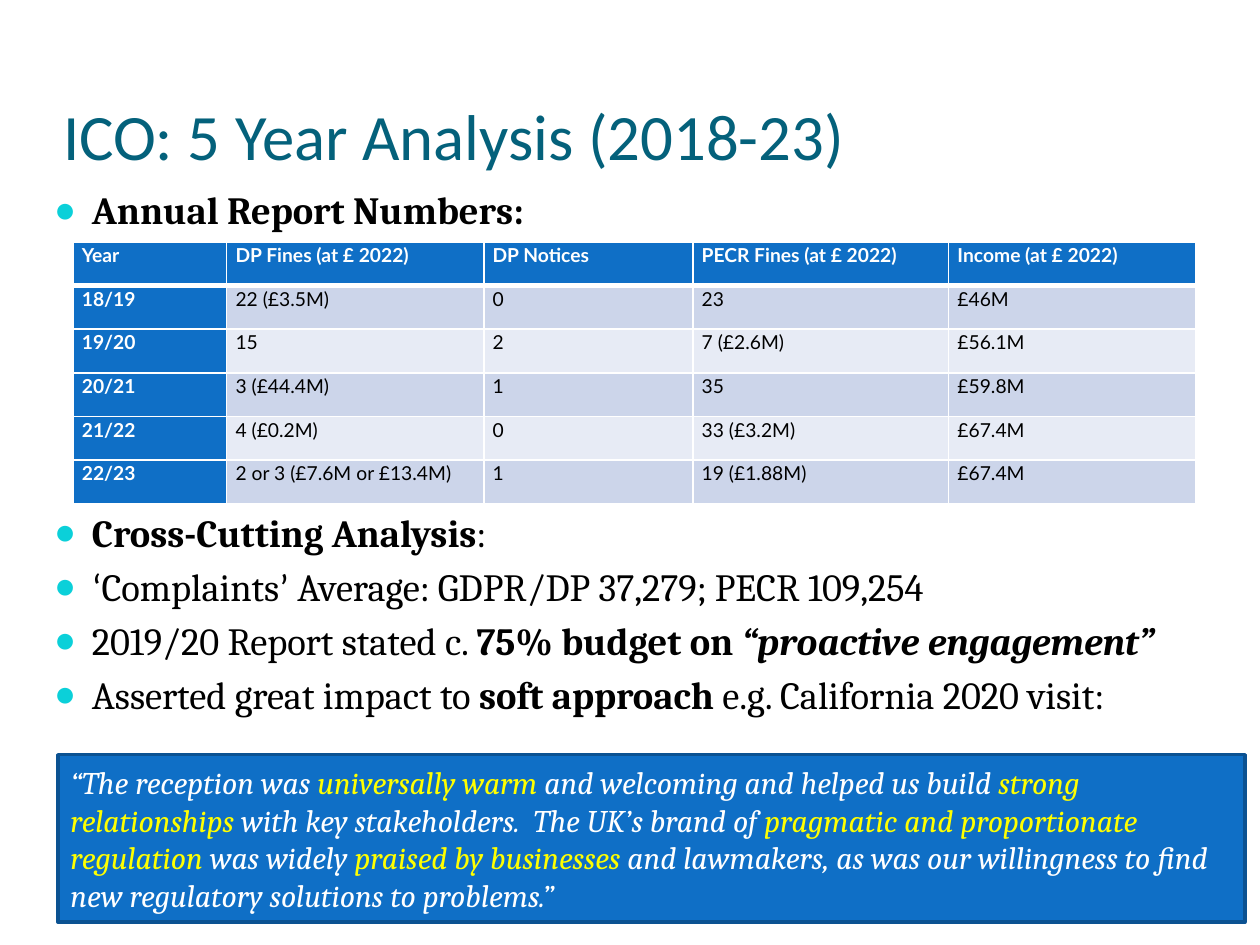
from dataclasses import dataclass
from lxml.etree import SubElement
from pptx import Presentation
from pptx.dml.color import RGBColor
from pptx.enum.shapes import MSO_SHAPE
from pptx.enum.text import MSO_ANCHOR, MSO_AUTO_SIZE, PP_ALIGN
from pptx.oxml import parse_xml
from pptx.oxml.ns import nsdecls, qn
from pptx.util import Inches, Pt


@dataclass(frozen=True)
class Theme:
    blue: str = "0F6FC6"
    outline: str = "0B5292"
    title: str = "04617B"
    bullet: str = "0BD0D9"
    white: str = "FFFFFF"
    black: str = "000000"
    yellow: str = "FFFF00"
    bands: tuple = ("CCD5EA", "E7EBF5")
    title_font: str = "Calibri"
    body_font: str = "Cambria"
    table_font: str = "Lato"
    title_size: float = 37
    body_size: float = 22
    quote_size: float = 18
    table_size: float = 11


THEME = Theme()
TITLE = "ICO: 5 Year Analysis (2018-23)"
BOLD = {"bold": True}
BOLD_ITALIC = {"bold": True, "italic": True}
MARK = {"font": THEME.title_font}

BULLETS = [
    [("Annual Report Numbers:", BOLD)],
    [("Cross-Cutting Analysis", BOLD), (":", {})],
    [("‘", MARK), ("Complaints", {}), ("’", MARK),
     (" Average: GDPR/DP 37,279; PECR 109,254", {})],
    [("2019/20 Report stated c. ", {}), ("75% budget on ", BOLD),
     ("“proactive engagement”", BOLD_ITALIC)],
    [("Asserted great impact to ", {}), ("soft approach ", BOLD),
     ("e.g. California 2020 visit:", {})],
]
BULLET_GAPS = [0, 158, 4.4, 4.4, 4.4]

TABLE = [
    ["Year", "DP Fines (at £ 2022)", "DP Notices", "PECR Fines (at £ 2022)", "Income (at £ 2022)"],
    ["18/19", "22 (£3.5M)", "0", "23", "£46M"],
    ["19/20", "15", "2", "7 (£2.6M)", "£56.1M"],
    ["20/21", "3 (£44.4M)", "1", "35", "£59.8M"],
    ["21/22", "4 (£0.2M)", "0", "33 (£3.2M)", "£67.4M"],
    ["22/23", "2 or 3 (£7.6M or £13.4M)", "1", "19 (£1.88M)", "£67.4M"],
]
COLUMN_WIDTHS = [1.22, 2.04, 1.66, 2.03, 1.96]
TABLE_HEIGHT = 2.08

QUOTE = [
    ("“The reception was ", THEME.white),
    ("universally warm", THEME.yellow),
    (" and welcoming and helped us build ", THEME.white),
    ("strong relationships ", THEME.yellow),
    ("with key stakeholders.  The UK’s brand of ", THEME.white),
    ("pragmatic and proportionate regulation ", THEME.yellow),
    ("was widely ", THEME.white),
    ("praised by businesses ", THEME.yellow),
    ("and lawmakers, as was our willingness to find new regulatory solutions to problems.”", THEME.white),
]


def add_span(para, text, font, size, color, bold=False, italic=False):
    span = para.add_run()
    span.text = text
    span.font.name = font
    span.font.size = Pt(size)
    span.font.bold = bold
    span.font.italic = italic
    span.font.color.rgb = RGBColor.from_string(color)


def place(shape, left, top, width, height):
    shape.left, shape.top = Inches(left), Inches(top)
    shape.width, shape.height = Inches(width), Inches(height)


def set_bullet(para):
    properties = para._p.get_or_add_pPr()
    properties.set("marL", str(Inches(0.3)))
    properties.set("indent", str(-Inches(0.3)))
    color = SubElement(properties, qn("a:buClr"))
    SubElement(color, qn("a:srgbClr"), val=THEME.bullet)
    SubElement(properties, qn("a:buSzPct"), val="95000")
    SubElement(properties, qn("a:buChar"), char="●")


def set_borders(cell, top, bottom):
    properties = cell._tc.get_or_add_tcPr()
    widths = {"lnL": 1, "lnR": 1, "lnT": top, "lnB": bottom}
    for position, (side, width) in enumerate(widths.items()):
        properties.insert(position, parse_xml(
            f'<a:{side} {nsdecls("a")} w="{Pt(width)}"><a:solidFill>'
            f'<a:srgbClr val="{THEME.white}"/></a:solidFill></a:{side}>'))


def add_title(page):
    title = page.shapes.title
    place(title, 0.5, 0.12, 9, 1.26)
    frame = title.text_frame
    frame.auto_size = MSO_AUTO_SIZE.NONE
    frame.vertical_anchor = MSO_ANCHOR.BOTTOM
    frame.margin_left = frame.margin_right = frame.margin_bottom = 0
    para = frame.paragraphs[0]
    para.alignment = PP_ALIGN.LEFT
    add_span(para, TITLE, THEME.title_font, THEME.title_size, THEME.title)


def add_bullets(page):
    body = page.placeholders[1]
    place(body, 0.33, 1.43, 9.67, 5.63)
    frame = body.text_frame
    frame.auto_size = MSO_AUTO_SIZE.NONE
    for index, (spans, gap) in enumerate(zip(BULLETS, BULLET_GAPS)):
        para = frame.add_paragraph() if index else frame.paragraphs[0]
        set_bullet(para)
        para.space_before = Pt(gap)
        for text, style in spans:
            add_span(para, text, **{"font": THEME.body_font, "size": THEME.body_size,
                                    "color": THEME.black, **style})


def add_numbers(page):
    table = page.shapes.add_table(
        len(TABLE), len(COLUMN_WIDTHS), Inches(0.58), Inches(1.92),
        Inches(sum(COLUMN_WIDTHS)), Inches(TABLE_HEIGHT)).table
    table.first_col = True
    for column, width in zip(table.columns, COLUMN_WIDTHS):
        column.width = Inches(width)
    for row_index, values in enumerate(TABLE):
        table.rows[row_index].height = Inches(TABLE_HEIGHT / len(TABLE))
        for column_index, value in enumerate(values):
            heading = row_index == 0 or column_index == 0
            cell = table.cell(row_index, column_index)
            cell.margin_left = cell.margin_right = Inches(0.07)
            cell.margin_top = cell.margin_bottom = 0
            cell.fill.solid()
            cell.fill.fore_color.rgb = RGBColor.from_string(
                THEME.blue if heading else THEME.bands[(row_index - 1) % 2])
            set_borders(cell, 3 if row_index == 1 else 1, 3 if row_index == 0 else 1)
            para = cell.text_frame.paragraphs[0]
            para.line_spacing = 1.07
            para.space_after = Pt(8)
            add_span(para, value, THEME.table_font, THEME.table_size,
                     THEME.white if heading else THEME.black, bold=heading)


def add_quote(page):
    box = page.shapes.add_shape(
        MSO_SHAPE.RECTANGLE, Inches(0.46), Inches(5.99), Inches(9.42), Inches(1.33))
    box.shadow.inherit = False
    box.fill.solid()
    box.fill.fore_color.rgb = RGBColor.from_string(THEME.blue)
    box.line.color.rgb = RGBColor.from_string(THEME.outline)
    box.line.width = Pt(2)
    frame = box.text_frame
    frame.word_wrap = True
    frame.vertical_anchor = MSO_ANCHOR.MIDDLE
    para = frame.paragraphs[0]
    para.alignment = PP_ALIGN.LEFT
    for text, color in QUOTE:
        add_span(para, text, THEME.body_font, THEME.quote_size, color, italic=True)


def main():
    deck = Presentation()
    deck.slide_width, deck.slide_height = Inches(10), Inches(7.5)
    page = deck.slides.add_slide(deck.slide_layouts[1])
    add_title(page)
    add_bullets(page)
    add_numbers(page)
    add_quote(page)
    deck.save("out.pptx")


if __name__ == "__main__":
    main()
